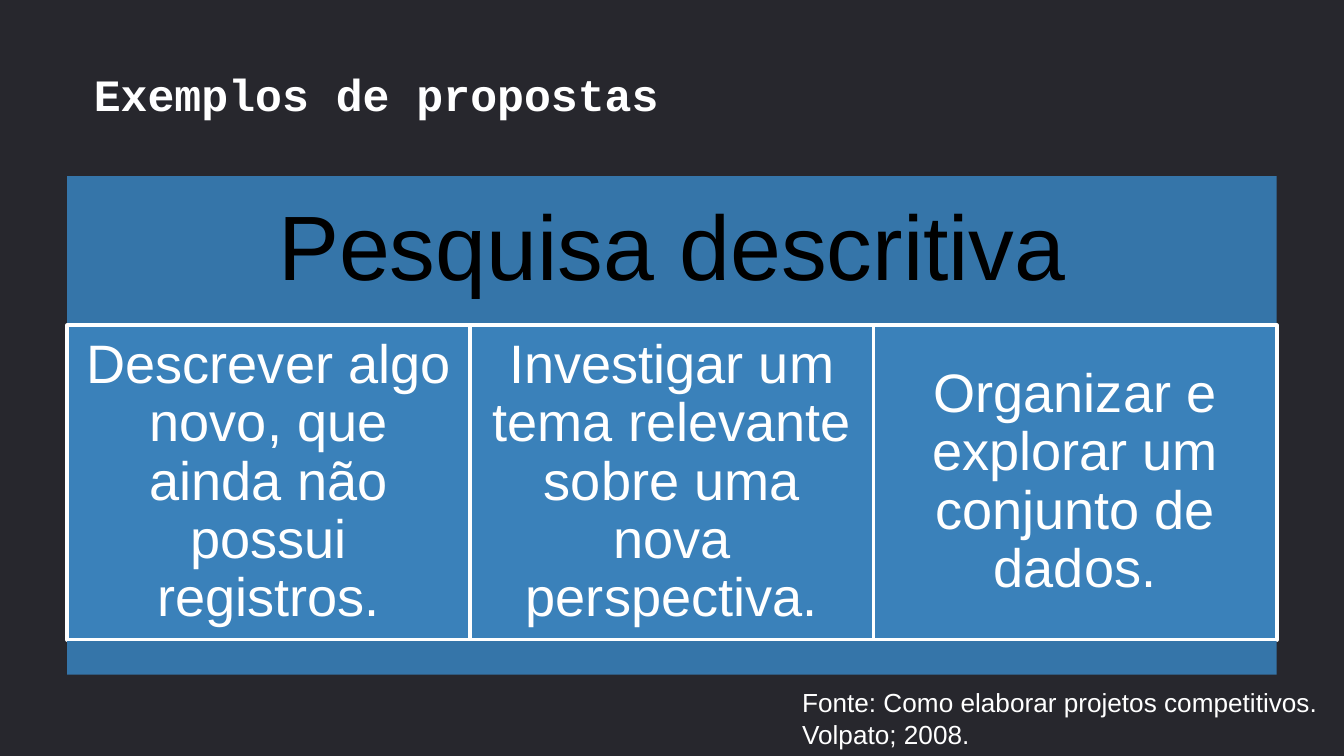
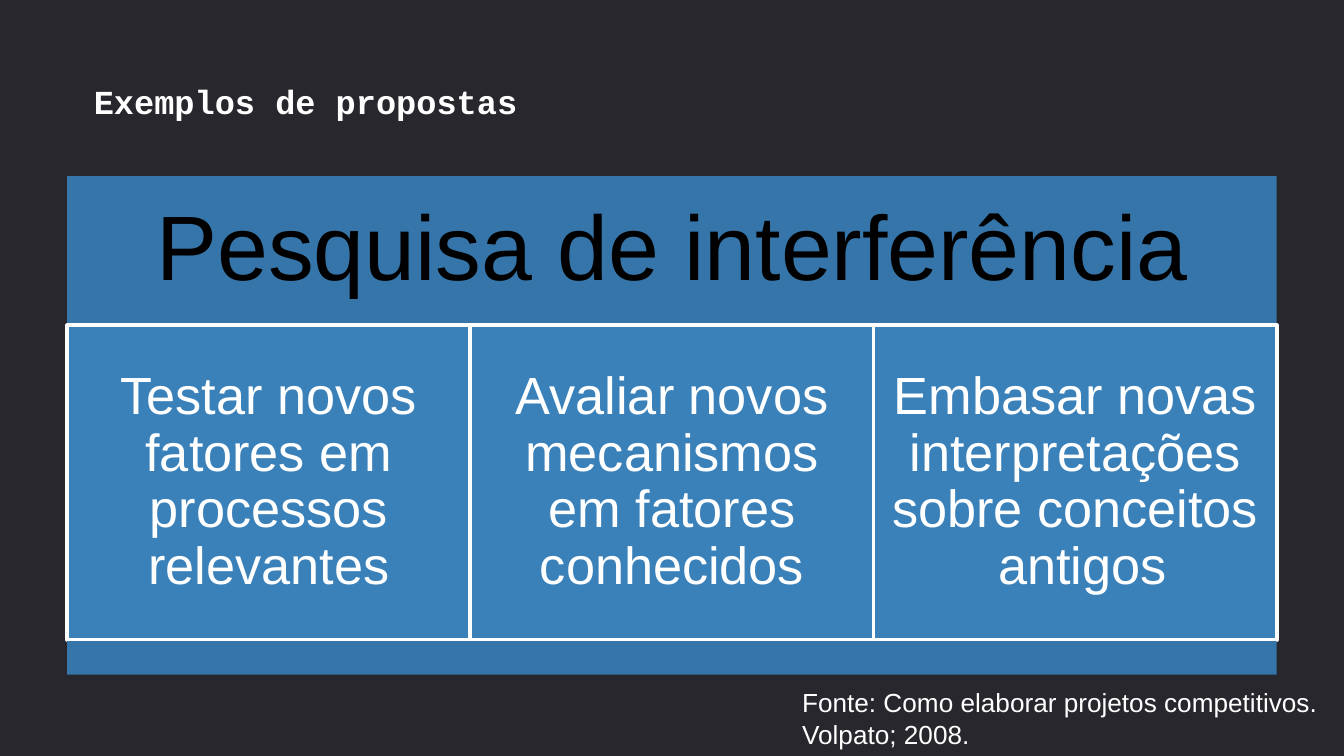
from pptx import Presentation
from pptx.dml.color import RGBColor
from pptx.enum import shapes, text
from pptx.util import Inches, Pt

BACKGROUND = RGBColor(0x27, 0x27, 0x2D)
BAND_BLUE = RGBColor(0x35, 0x75, 0xA9)
CELL_BLUE = RGBColor(0x3A, 0x81, 0xBA)
WHITE = RGBColor(0xFF, 0xFF, 0xFF)
BLACK = RGBColor(0, 0, 0)

TITLE = "Exemplos de propostas"
SOURCE = "Fonte: Como elaborar projetos competitivos. Volpato; 2008."
PAGE_WIDTH = 10
PAGE_HEIGHT = PAGE_WIDTH * 9 / 16
LEFT, WIDTH = 0.5, 9

PROPOSALS = [
    {
        "title_size": 24,
        "heading": "Pesquisa descritiva",
        "cell_size": 29,
        "cells": [
            "Descrever algo novo, que ainda não possui registros.",
            "Investigar um tema relevante sobre uma nova perspectiva.",
            "Organizar e explorar um conjunto de dados.",
        ],
    },
    {
        "title_size": 18,
        "heading": "Pesquisa de interferência",
        "cell_size": 28,
        "cells": [
            "Testar novos fatores em processos relevantes",
            "Avaliar novos mecanismos em fatores conhecidos",
            "Embasar novas interpretações sobre conceitos  antigos",
        ],
    },
]


def set_format(target, values):
    for name, value in values.items():
        setattr(target, name, value)


def write(shape, words, size, color=WHITE, font="Arial", bold=False,
          inset=(0.1, 0.1), anchor=text.MSO_ANCHOR.TOP, para_format=None):
    """Fill a shape with one paragraph; inset is (horizontal, vertical) inches."""
    frame = shape.text_frame
    across, down = map(Inches, inset)
    set_format(frame, {
        "word_wrap": True, "vertical_anchor": anchor,
        "margin_left": across, "margin_right": across,
        "margin_top": down, "margin_bottom": down,
    })
    para = frame.paragraphs[0]
    set_format(para, para_format or {"alignment": text.PP_ALIGN.LEFT})
    span = para.add_run()
    span.text = words
    set_format(span.font, {"name": font, "size": Pt(size), "bold": bold})
    span.font.color.rgb = color


def add_text(page, place, words, size, **style):
    box = page.shapes.add_textbox(*map(Inches, place))
    write(box, words, size, **style)
    return box


def add_block(page, place, fill, outlined=False):
    block = page.shapes.add_shape(shapes.MSO_SHAPE.RECTANGLE, *map(Inches, place))
    block.shadow.inherit = False
    block.fill.solid()
    block.fill.fore_color.rgb = fill
    if outlined:
        block.line.color.rgb = WHITE
        block.line.width = Pt(2)
    else:
        block.line.fill.background()
    return block


def write_centred(block, words, size, color, inset):
    write(block, words, size, color, inset=(inset, inset),
          anchor=text.MSO_ANCHOR.MIDDLE,
          para_format={"alignment": text.PP_ALIGN.CENTER, "line_spacing": 0.9,
                       "space_after": Pt(round(size * 0.35))})


def add_proposal_grid(page, heading, cells, cell_size):
    """Heading band, a row of equal cells and a thin closing band."""
    band = add_block(page, (LEFT, 1.31, WIDTH, 1.11), BAND_BLUE)
    write_centred(band, heading, 49, BLACK, 0.2)
    cell_width = WIDTH / len(cells)
    for column, words in enumerate(cells):
        place = (LEFT + column * cell_width, 2.42, cell_width, 2.34)
        cell = add_block(page, place, CELL_BLUE, outlined=True)
        write_centred(cell, words, cell_size, WHITE, 0.12)
    add_block(page, (LEFT, 4.77, WIDTH, 0.25), BAND_BLUE)


def add_page(deck, proposal):
    page = deck.slides.add_slide(deck.slide_layouts[6])
    page.background.fill.solid()
    page.background.fill.fore_color.rgb = BACKGROUND
    add_text(page, (0.6, 0.4, 8.2, 0.6), TITLE, proposal["title_size"],
             font="Courier New", bold=True, anchor=text.MSO_ANCHOR.BOTTOM)
    source = add_text(page, (5.87, 5.06, 4.13, 0.57), SOURCE, 14, inset=(0.1, 0.05))
    source.text_frame.auto_size = text.MSO_AUTO_SIZE.SHAPE_TO_FIT_TEXT
    add_proposal_grid(page, proposal["heading"], proposal["cells"],
                      proposal["cell_size"])


def main():
    deck = Presentation()
    deck.slide_width = Inches(PAGE_WIDTH)
    deck.slide_height = Inches(PAGE_HEIGHT)
    for proposal in PROPOSALS:
        add_page(deck, proposal)
    deck.save("out.pptx")


if __name__ == "__main__":
    main()
